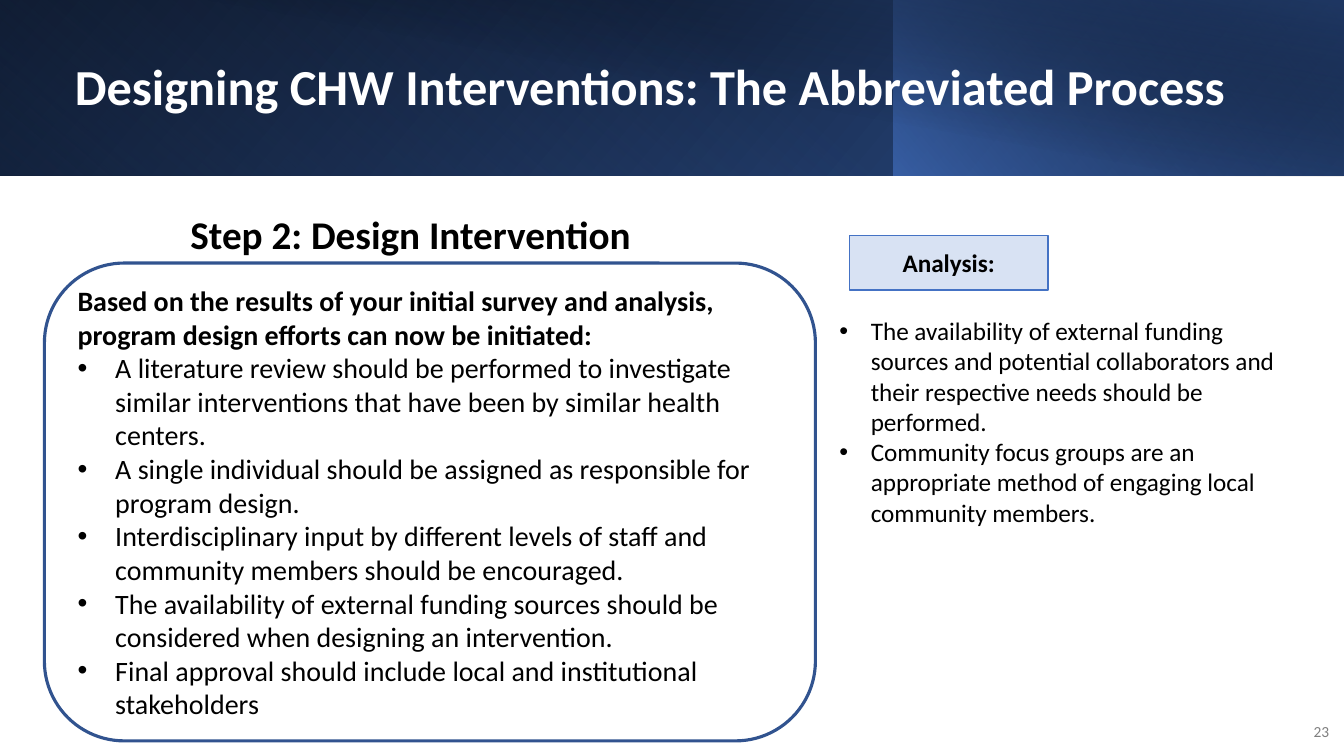
from dataclasses import dataclass

from lxml import etree
from pptx import Presentation
from pptx.dml import color
from pptx.enum import shapes, text
from pptx.oxml import ns
from pptx.util import Cm, Pt


@dataclass(frozen=True)
class Theme:
    font: str = "Calibri"
    black: str = "000000"
    white: str = "FFFFFF"
    grey: str = "7F7F7F"
    accent: str = "4472C4"
    deep: str = "2F5496"
    navy: str = "1F3864"
    outline: str = "31538F"
    pale: str = "D8E2F3"
    title_size: int = 36
    heading_size: int = 28
    list_size: int = 20
    side_size: int = 18
    number_size: int = 11


@dataclass(frozen=True)
class Box:
    left: float
    top: float
    width: float
    height: float

    def lengths(self) -> tuple:
        return Cm(self.left), Cm(self.top), Cm(self.width), Cm(self.height)


@dataclass(frozen=True)
class Band:
    box: Box
    angle: int
    stops: tuple  # (position %, colour, opacity %)
    flipped: bool = True
    rotation: int = 0


@dataclass(frozen=True)
class BulletList:
    box: Box
    size: int
    indent: float
    items: tuple
    intro: str = ""


THEME = Theme()
RECTANGLE = shapes.MSO_SHAPE.RECTANGLE
BAND_HEIGHT = 4.42
SLIDE_WIDTH = 33.87
CORNER = 0.167

BANDS = (
    Band(Box(0, 0, SLIDE_WIDTH, BAND_HEIGHT), 140,
         ((0, THEME.black, 100), (100, THEME.deep, 100))),
    Band(Box(0, 0, 22.56, BAND_HEIGHT), 230,
         ((0, THEME.accent, 0), (20, THEME.accent, 0), (100, THEME.navy, 55)), rotation=180),
    Band(Box(22.53, 0, 11.33, BAND_HEIGHT), 220,
         ((0, THEME.accent, 65), (100, THEME.black, 29))),
    Band(Box(1.27, 0, 32.59, 4.44), 280,
         ((0, THEME.black, 0), (50, THEME.black, 0), (99, THEME.navy, 51),
          (100, THEME.navy, 51)), flipped=False),
)

PANEL = Box(1.12, 6.63, 19.43, 12.04)
INSET = round(CORNER * PANEL.height * 0.29, 2)  # keeps text clear of the round corners

DESIGN_STEPS = BulletList(
    Box(PANEL.left + INSET, PANEL.top + INSET,
        PANEL.width - 2 * INSET, PANEL.height - 2 * INSET),
    THEME.list_size, 0.95,
    (
        "A literature review should be performed to investigate similar interventions "
        "that have been by similar health centers.",
        "A single individual should be assigned as responsible for program design.",
        "Interdisciplinary input by different levels of staff and community members "
        "should be encouraged.",
        "The availability of external funding sources should be considered when "
        "designing an intervention.",
        "Final approval should include local and institutional stakeholders",
    ),
    "Based on the results of your initial survey and analysis, program design efforts "
    "can now be initiated:",
)
ANALYSIS_POINTS = BulletList(
    Box(20.9, 7.82, 11.86, 5.64), THEME.side_size, 0.79,
    (
        "The availability of external funding sources and potential collaborators and "
        "their respective needs should be performed.",
        "Community focus groups are an appropriate method of engaging local community "
        "members.",
    ),
)


def rgb(code: str) -> color.RGBColor:
    return color.RGBColor.from_string(code)


def place(shape, box: Box) -> None:
    shape.left, shape.top, shape.width, shape.height = box.lengths()


def style(paragraph, size: int, ink: str, bold: bool) -> None:
    for run in paragraph.runs:
        run.font.name = THEME.font
        run.font.size = Pt(size)
        run.font.bold = bold
        run.font.color.rgb = rgb(ink)


def write(shape, words: str, size: int, ink: str, bold: bool = True,
          align=text.PP_ALIGN.LEFT, anchor=text.MSO_ANCHOR.MIDDLE) -> None:
    frame = shape.text_frame
    frame.text = words
    frame.word_wrap = True
    frame.auto_size = text.MSO_AUTO_SIZE.NONE
    frame.vertical_anchor = anchor
    frame.paragraphs[0].alignment = align
    style(frame.paragraphs[0], size, ink, bold)


def draw_box(slide, kind, box: Box, fill: str, line: str, weight: float):
    shape = slide.shapes.add_shape(kind, *box.lengths())
    shape.shadow.inherit = False
    shape.fill.solid()
    shape.fill.fore_color.rgb = rgb(fill)
    shape.line.color.rgb = rgb(line)
    shape.line.width = Pt(weight)
    return shape


def draw_band(slide, band: Band) -> None:
    shape = slide.shapes.add_shape(RECTANGLE, *band.box.lengths())
    shape.shadow.inherit = False
    shape.line.fill.background()
    shape.rotation = band.rotation
    properties = shape.element.spPr
    if band.flipped:
        properties.find(ns.qn("a:xfrm")).set("flipH", "1")
    # Multi-stop gradient with transparency
    gradient = etree.Element(ns.qn("a:gradFill"), rotWithShape="1")
    stop_list = etree.SubElement(gradient, ns.qn("a:gsLst"))
    for position, code, opacity in band.stops:
        stop = etree.SubElement(stop_list, ns.qn("a:gs"), pos=str(position * 1000))
        shade = etree.SubElement(stop, ns.qn("a:srgbClr"), val=code)
        etree.SubElement(shade, ns.qn("a:alpha"), val=str(opacity * 1000))
    etree.SubElement(gradient, ns.qn("a:lin"), ang=str(band.angle * 60000), scaled="0")
    properties.find(ns.qn("a:prstGeom")).addnext(gradient)


def set_bullet(paragraph, indent: float) -> None:
    properties = paragraph._p.get_or_add_pPr()
    properties.set("marL", str(Cm(indent)))
    properties.set("indent", str(-Cm(indent)))
    if indent:
        etree.SubElement(properties, ns.qn("a:buFont"), typeface="Arial")
        etree.SubElement(properties, ns.qn("a:buChar"), char="•")
    else:
        etree.SubElement(properties, ns.qn("a:buNone"))


def fill_list(body, content: BulletList, anchor) -> None:
    place(body, content.box)
    frame = body.text_frame
    intro = (content.intro,) if content.intro else ()
    frame.text = "\n".join(intro + content.items)
    frame.word_wrap = True
    frame.auto_size = text.MSO_AUTO_SIZE.NONE
    frame.vertical_anchor = anchor
    for position, paragraph in enumerate(frame.paragraphs):
        is_intro = position < len(intro)
        paragraph.space_before = Pt(0)
        set_bullet(paragraph, 0 if is_intro else content.indent)
        style(paragraph, content.size, THEME.black, is_intro)


def main() -> None:
    deck = Presentation()
    deck.slide_width, deck.slide_height = Cm(SLIDE_WIDTH), Cm(19.05)
    slide = deck.slides.add_slide(deck.slide_layouts[3])
    title, design_steps, analysis_points = slide.placeholders

    # Header bands and list panel
    for band in BANDS:
        draw_band(slide, band)
    panel = draw_box(slide, shapes.MSO_SHAPE.ROUNDED_RECTANGLE, PANEL,
                     THEME.white, THEME.outline, 2.25)
    panel.adjustments[0] = CORNER

    # Title and lists, raised above the bands and the panel
    for placeholder in (title, design_steps, analysis_points):
        slide.shapes.element.append(placeholder.element)
    place(title, Box(1.63, 0.81, 29.67, 2.87))
    write(title, "Designing CHW Interventions: The Abbreviated Process",
          THEME.title_size, THEME.white)
    title.text_frame.paragraphs[0].line_spacing = 0.9
    fill_list(design_steps, DESIGN_STEPS, text.MSO_ANCHOR.MIDDLE)
    fill_list(analysis_points, ANALYSIS_POINTS, text.MSO_ANCHOR.TOP)

    # Headings
    step = slide.shapes.add_textbox(*Box(4.55, 5.18, 12.57, 1.44).lengths())
    write(step, "Step 2: Design Intervention", THEME.heading_size, THEME.black,
          anchor=text.MSO_ANCHOR.TOP)
    analysis = draw_box(slide, RECTANGLE, Box(21.41, 5.94, 5, 1.37),
                        THEME.pale, THEME.accent, 1)
    write(analysis, "Analysis:", THEME.side_size, THEME.black, align=text.PP_ALIGN.CENTER)

    # Page number
    page_number = slide.shapes.add_textbox(*Box(32.51, 17.93, 1.24, 1.02).lengths())
    write(page_number, "23", THEME.number_size, THEME.grey, bold=False,
          align=text.PP_ALIGN.RIGHT)

    deck.save("out.pptx")


if __name__ == "__main__":
    main()
